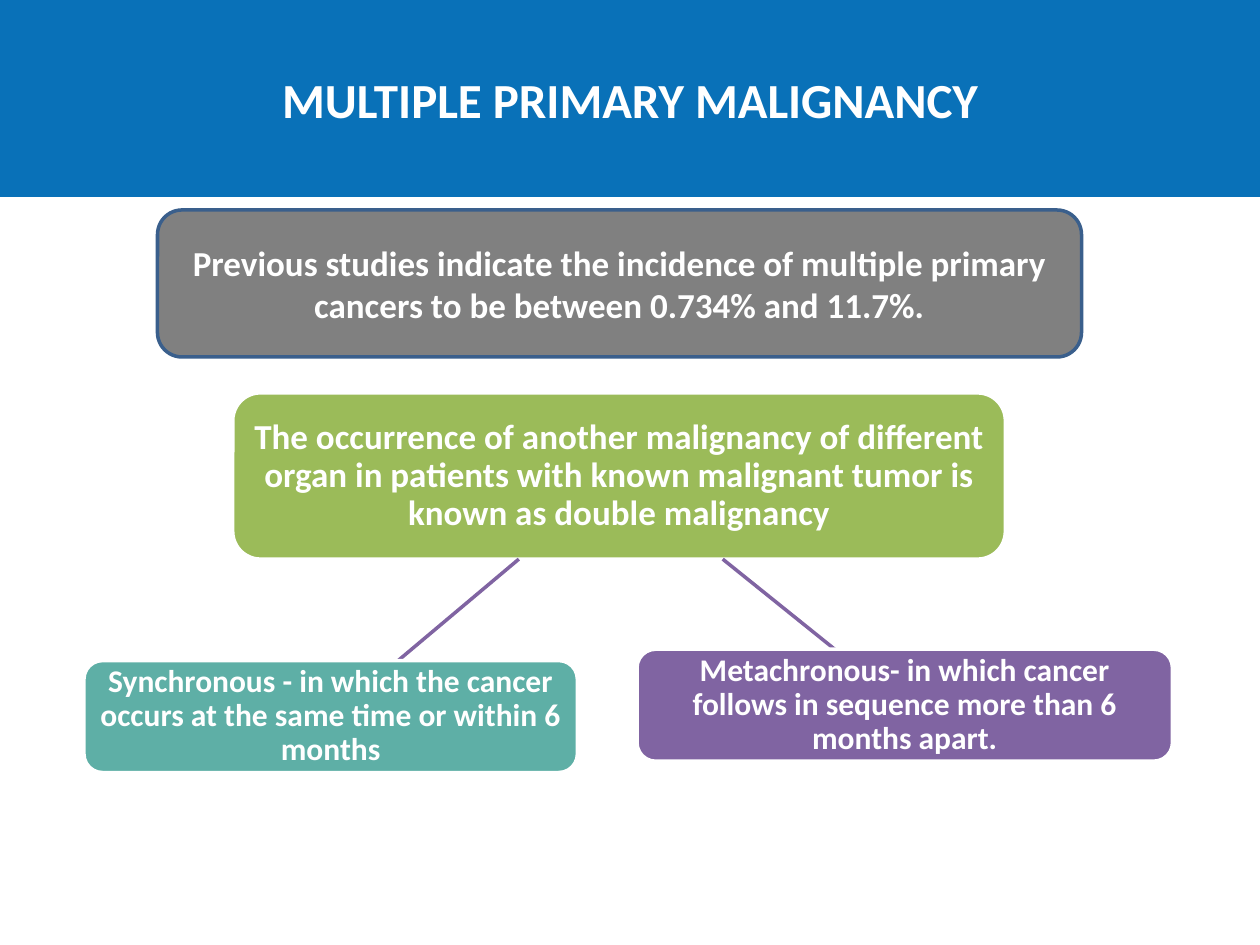
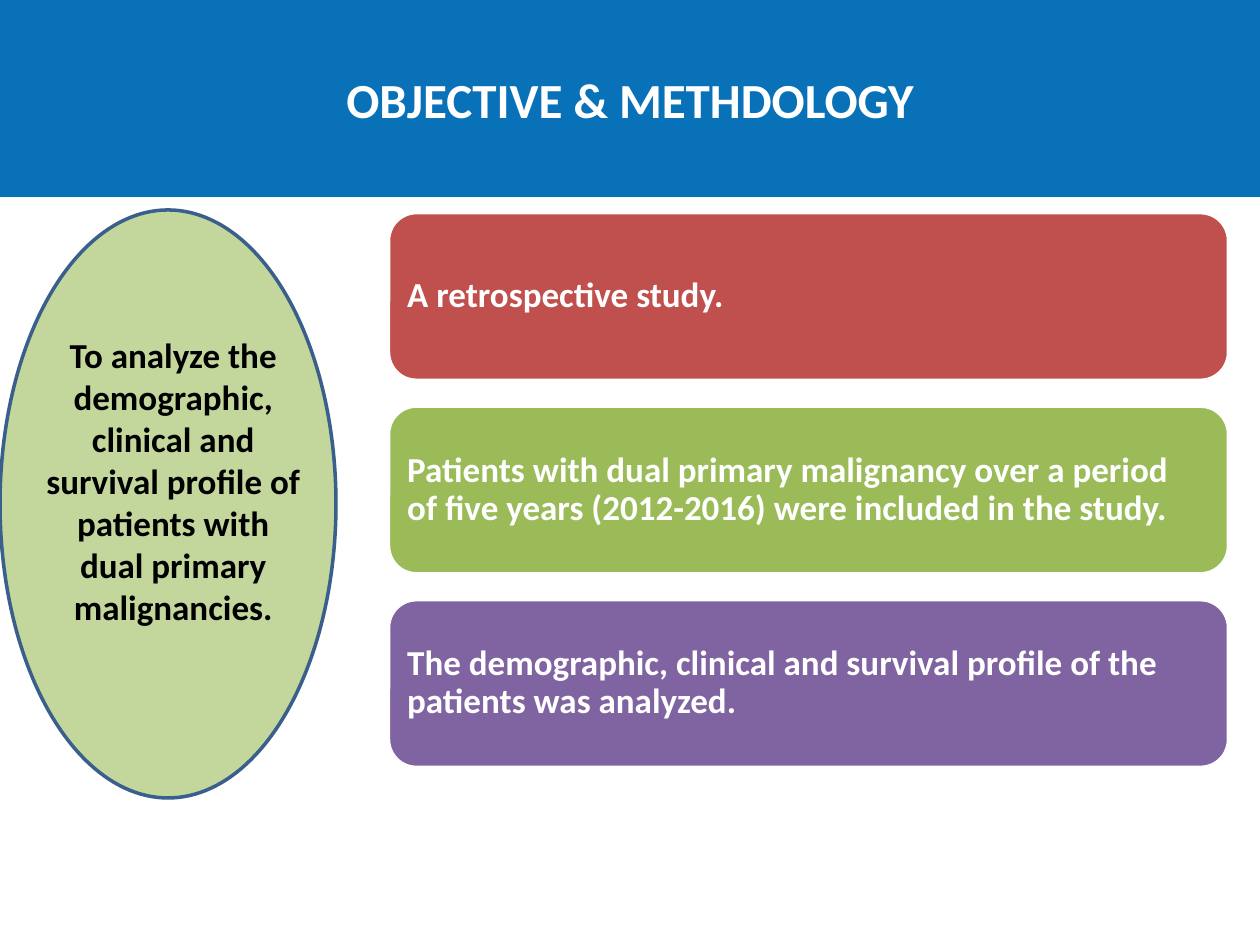
from lxml import etree
from pptx import Presentation
from pptx.dml.color import RGBColor
from pptx.enum.shapes import MSO_CONNECTOR as LINE, MSO_SHAPE as SHAPE
from pptx.enum.text import MSO_ANCHOR as ANCHOR, PP_ALIGN as ALIGN
from pptx.oxml.ns import qn
from pptx.util import Pt

FONT = "Calibri"
WHITE = RGBColor(0xFF, 0xFF, 0xFF)
BLACK = RGBColor(0, 0, 0)
BLUE = RGBColor(0x09, 0x71, 0xB8)
NAVY = RGBColor(0x3A, 0x5F, 0x8C)
GRAY = RGBColor(0x80, 0x80, 0x80)
GREEN = RGBColor(0x9B, 0xBB, 0x59)
PALE = RGBColor(0xC3, 0xD6, 0x9B)
TEAL = RGBColor(0x5E, 0xAF, 0xA6)
PURPLE = RGBColor(0x80, 0x64, 0xA2)
RED = RGBColor(0xC0, 0x50, 0x4D)

WIDTH, HEIGHT = 720, 540
BAND = (0, 0, WIDTH, 112.5)
TITLE = (36, 11.5, 648, 90)
EDGE = 2


def pts(*nums):
    return [Pt(num) for num in nums]


def write(frame, text, size, color=WHITE, align=ALIGN.CENTER, space=1.0, anchor=ANCHOR.MIDDLE):
    frame.word_wrap = True
    frame.vertical_anchor = anchor
    frame.text = text
    para = frame.paragraphs[0]
    para.alignment = align
    para.line_spacing = space
    font = para.font
    font.name, font.size, font.bold = FONT, Pt(size), True
    font.color.rgb = color


def draw(slide, kind, box, fill, edge=None):
    shape = slide.shapes.add_shape(kind, *pts(*box))
    shape.shadow.inherit = False
    shape.fill.solid()
    shape.fill.fore_color.rgb = fill
    if edge is None:
        shape.line.fill.background()
    else:
        shape.line.color.rgb = edge
        shape.line.width = Pt(EDGE)
    return shape


def card(slide, box, fill, text, size=20, inset=4.5, right=None, align=ALIGN.CENTER):
    """White-edged rounded box with tightly spaced text."""
    frame = draw(slide, SHAPE.ROUNDED_RECTANGLE, box, fill, WHITE).text_frame
    frame.margin_left = frame.margin_top = frame.margin_bottom = Pt(inset)
    frame.margin_right = Pt(right or inset)
    write(frame, text, size, align=align, space=0.9)


def branch(slide, start, end):
    line = slide.shapes.add_connector(LINE.STRAIGHT, *pts(*start, *end))
    line.line.color.rgb = PURPLE
    line.line.width = Pt(EDGE)
    props = line.element.find(qn("p:spPr"))
    etree.SubElement(props, qn("a:effectLst"))


def add_slide(deck, layout, title):
    slide = deck.slides.add_slide(layout)
    head = slide.shapes.title
    head.left, head.top, head.width, head.height = pts(*TITLE)
    write(head.text_frame, title, 28)
    return slide


def add_band(slide, layout):
    """Draw the title band and move it to the layout, behind all else."""
    band = draw(slide, SHAPE.RECTANGLE, BAND, BLUE)
    layout.shapes.element.insert(2, band.element)


def fact(slide, box):
    shape = draw(slide, SHAPE.ROUNDED_RECTANGLE, box, GRAY, NAVY)
    write(shape.text_frame, "Previous studies indicate the incidence of multiple primary "
          "cancers to be between 0.734% and 11.7%.", 20)


def tree(slide, box):
    """Definition box on top, with one branch to each of its two kinds."""
    left, top, width, height = box
    indent, root_wide, root_tall = 85, 441.5, 95
    base = top + root_tall
    card(slide, (left + indent, top, root_wide, root_tall), GREEN,
         "The occurrence of another malignancy of different organ in "
         "patients with known malignant tumor is known as double malignancy")

    tall, rise = 64, 6.5
    sync_wide, meta_wide = 282, 306
    low = top + height - tall
    kinds = [
        ((left, low, sync_wide, tall), TEAL, 248.5, 179.5,
         "Synchronous - in which the cancer occurs at the same time or within 6 months"),
        ((left + width - meta_wide, low - rise, meta_wide, tall), PURPLE, 365, 429,
         "Metachronous- in which cancer follows in sequence more than 6 months apart."),
    ]
    for spot, fill, start, end, text in kinds:
        branch(slide, (left + start, base), (left + end, spot[1]))
        card(slide, spot, fill, text, size=18)


def goal(slide, box):
    """Oval with its text in a box set in from the sides."""
    left, top, width, height = box
    draw(slide, SHAPE.OVAL, box, PALE, NAVY)
    inset, drop, wide = 18, 67, 162
    note = slide.shapes.add_textbox(*pts(left + inset, top + drop, wide, height - 2 * drop))
    write(note.text_frame, "To analyze the demographic, clinical and survival profile of "
          "patients with dual primary malignancies.", 20, BLACK, anchor=ANCHOR.TOP)


def steps(slide, box):
    """Equal cards stacked to fill the box."""
    left, top, width, height = box
    cards = [
        (RED, "A retrospective study."),
        (GREEN, "Patients with dual primary malignancy over a period of five years "
                "(2012-2016) were included in the study."),
        (PURPLE, "The demographic, clinical and survival profile of the patients "
                 "was analyzed."),
    ]
    gap = 14.75
    tall = (height - gap * (len(cards) - 1)) / len(cards)
    for row, (fill, text) in enumerate(cards):
        spot = (left, top + row * (tall + gap), width, tall)
        card(slide, spot, fill, text, inset=6, right=16, align=ALIGN.LEFT)


def main():
    deck = Presentation()
    deck.slide_width, deck.slide_height = pts(WIDTH, HEIGHT)
    layout = deck.slide_layouts.get_by_name("Title Only")

    slide = add_slide(deck, layout, "MULTIPLE PRIMARY MALIGNANCY")
    add_band(slide, layout)
    fact(slide, (90, 120, 528, 84))
    tree(slide, (48, 224.5, 622, 217))

    slide = add_slide(deck, layout, "OBJECTIVE & METHDOLOGY")
    goal(slide, (0, 120, 192, 336))
    steps(slide, (222, 121.5, 480, 317))

    deck.save("out.pptx")


if __name__ == "__main__":
    main()
